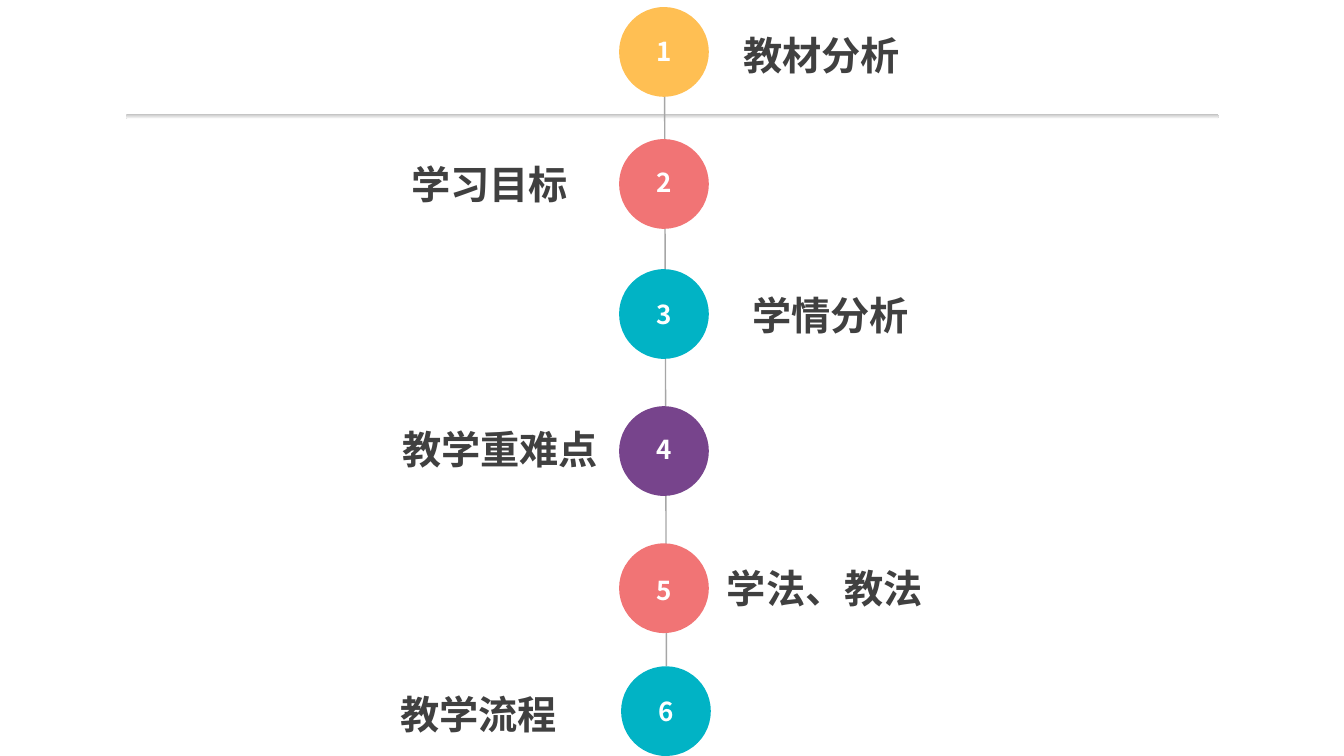
import pptx
import pptx.dml.color
import pptx.enum.shapes
import pptx.enum.text
import pptx.oxml.ns
import pptx.util
from lxml import etree

RGB = pptx.dml.color.RGBColor
SHAPE = pptx.enum.shapes.MSO_SHAPE
ALIGN = pptx.enum.text.PP_ALIGN
FIT = pptx.enum.text.MSO_AUTO_SIZE.SHAPE_TO_FIT_TEXT
qn = pptx.oxml.ns.qn

WHITE = RGB(0xFF, 0xFF, 0xFF)
SILVER = RGB(0xBF, 0xBF, 0xBF)
GREY = RGB(0xA6, 0xA6, 0xA6)
DARK = RGB(0x40, 0x40, 0x40)
AMBER = RGB(0xFF, 0xBF, 0x53)
CORAL = RGB(0xF1, 0x74, 0x75)
TEAL = RGB(0x01, 0xB3, 0xC5)
PLUM = RGB(0x77, 0x44, 0x8C)

FONT = "Noto Sans CJK SC"
DISC = 89
DIGIT = {"name": FONT, "size": pptx.util.Pt(18.6), "bold": True}
LABEL = {"name": FONT, "size": pptx.util.Pt(28), "bold": True}
INSET = {"margin_left": 13, "margin_right": 13, "margin_top": 7, "margin_bottom": 7}

STEPS = [
    ((614, 7), AMBER, 23, "教材分析", (724, 24, 425, 60), ALIGN.LEFT),
    ((614, 138), CORAL, 22, "学习目标", (359, 152, 217, 60), ALIGN.RIGHT),
    ((614, 267), TEAL, 24, "学情分析", (733, 282, 258, 60), ALIGN.LEFT),
    ((614, 403), PLUM, 22, "教学重难点", (386, 415, 230, 60), ALIGN.LEFT),
    ((614, 539), CORAL, 26, "学法、教法", (708, 553, 258, 60), ALIGN.LEFT),
    ((616, 661), TEAL, 24, "教学流程", (384, 678, 425, 60), ALIGN.LEFT),
]


def px(*nums):
    """Turn lengths in px, 100 to the inch, into EMU."""
    return [pptx.util.Emu(num * 9144) for num in nums]


def apply(obj, vals):
    """Set each attribute named in vals on obj."""
    for key, val in vals.items():
        setattr(obj, key, val)


def write(shapes, box, text, look, color, align, wrap, inset):
    """Put one line of text into a box that grows to fit it."""
    frame = shapes.add_textbox(*px(*box)).text_frame
    apply(frame, {"word_wrap": wrap, "auto_size": FIT})
    apply(frame, {key: px(val)[0] for key, val in inset.items()})
    para = frame.paragraphs[0]
    para.alignment = align
    run = para.add_run()
    run.text = text
    apply(run.font, look)
    run.font.color.rgb = color
    east = etree.SubElement(run.font._element, qn("a:ea"))
    east.set("typeface", FONT)


def rule(shapes, box):
    """Draw the thin bar that fades from grey to white."""
    bar = shapes.add_shape(SHAPE.ROUNDED_RECTANGLE, *px(*box))
    bar.adjustments[0] = 0.5
    bar.shadow.inherit = False
    bar.line.fill.background()
    bar.fill.gradient()
    bar.fill.gradient_angle = 270
    for stop, color in zip(bar.fill.gradient_stops, (SILVER, WHITE)):
        stop.color.rgb = color


def spine(shapes, ends):
    """Draw the line that joins the discs."""
    kind = pptx.enum.shapes.MSO_CONNECTOR.STRAIGHT
    line = shapes.add_connector(kind, *px(*ends))
    line.line.color.rgb = GREY
    line.line.width = pptx.util.Pt(1)
    etree.SubElement(line._element.spPr, qn("a:effectLst"))


def disc(shapes, spot, color, drop, num):
    """Draw a numbered disc with its top left corner at spot."""
    left, top = spot
    group = shapes.add_group_shape().shapes
    oval = group.add_shape(SHAPE.OVAL, *px(left, top, DISC, DISC))
    oval.shadow.inherit = False
    oval.fill.solid()
    oval.fill.fore_color.rgb = color
    oval.line.fill.background()
    box = (left + 27, top + drop, 36, 41)
    write(group, box, str(num), DIGIT, WHITE, ALIGN.CENTER, False, {})


def agenda(deck):
    """Build the slide of numbered steps along a spine."""
    shapes = deck.slides.add_slide(deck.slide_layouts[6]).shapes
    rule(shapes, (125, 113, 1084, 5))
    spine(shapes, (659, 35, 661, 661))
    for num, (spot, color, drop, text, box, align) in enumerate(STEPS, 1):
        disc(shapes, spot, color, drop, num)
        write(shapes, box, text, LABEL, DARK, align, True, INSET)


def main():
    """Make the deck and save it."""
    deck = pptx.Presentation()
    deck.slide_width, deck.slide_height = px(1333, 750)
    agenda(deck)
    deck.save("out.pptx")


if __name__ == "__main__":
    main()
